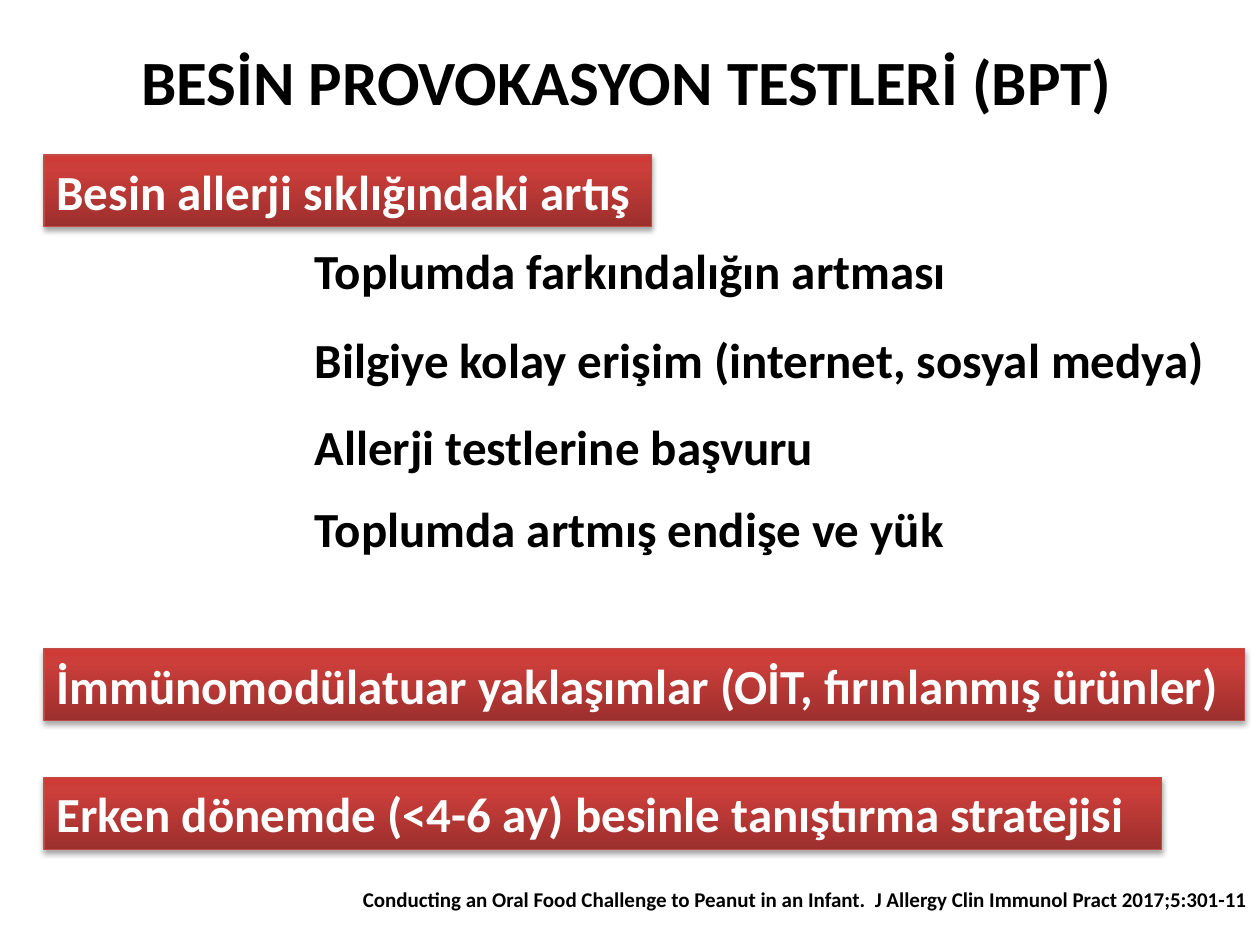
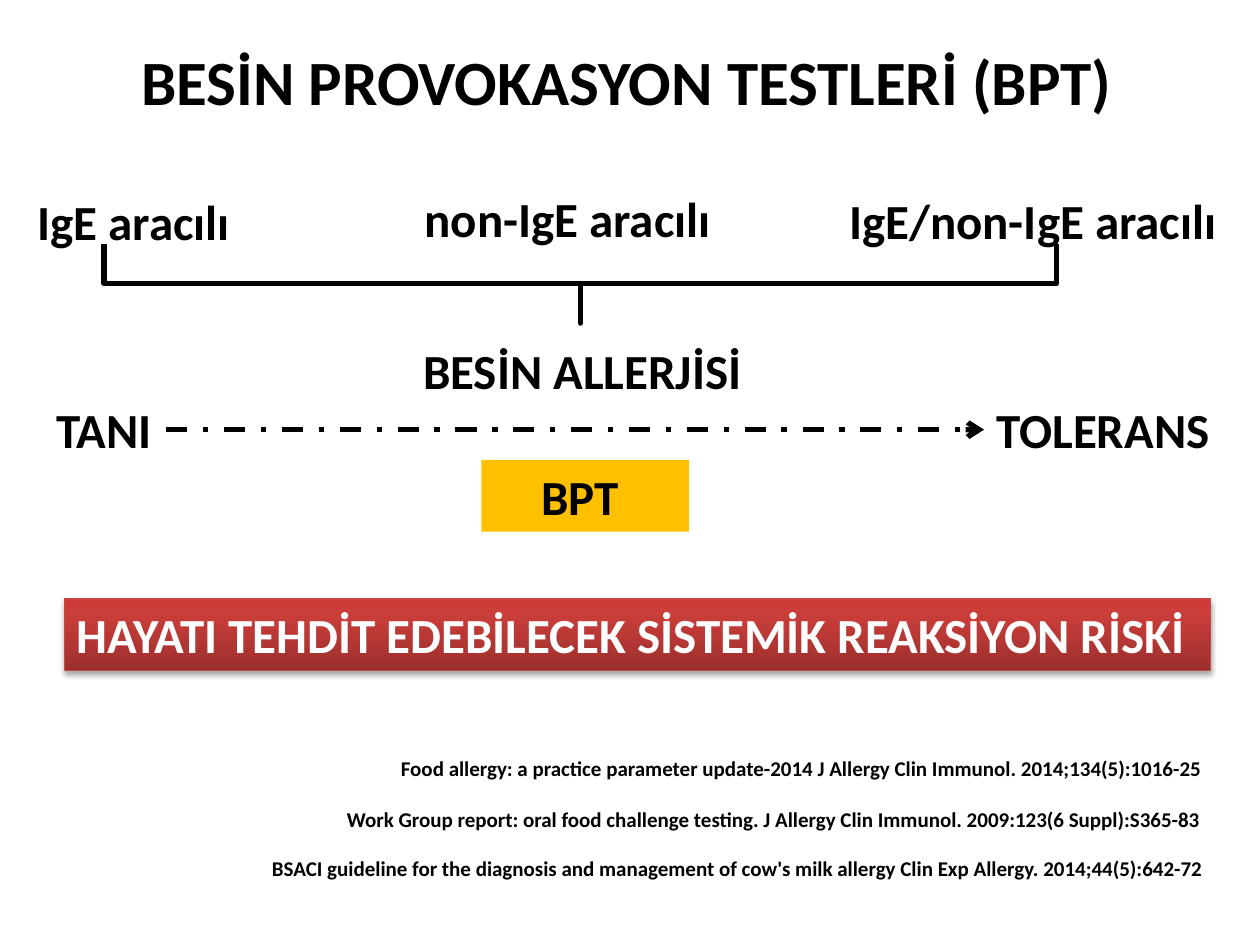
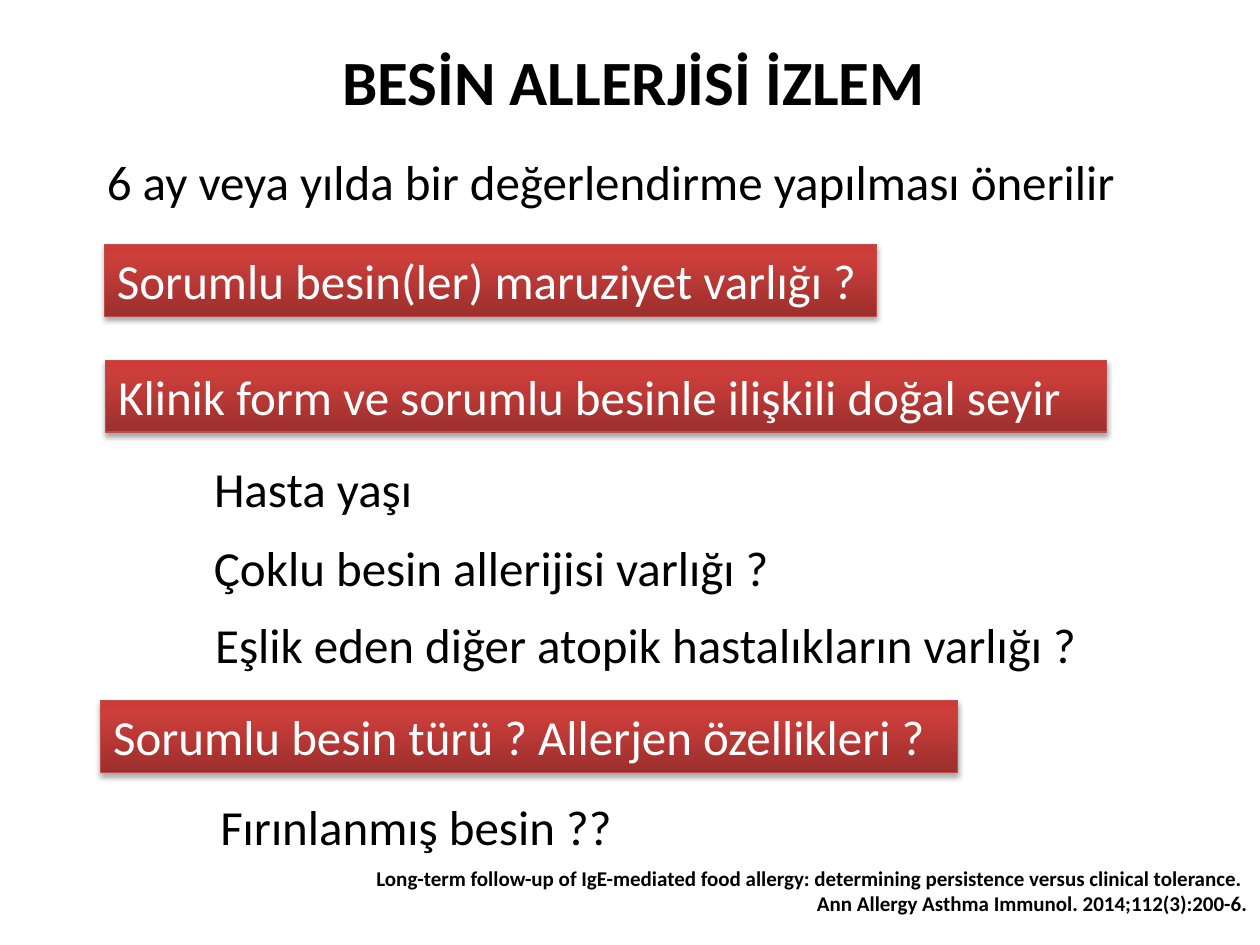
from dataclasses import dataclass
from lxml.etree import SubElement
from pptx import Presentation
from pptx.dml.color import RGBColor as Rgb
from pptx.enum.dml import MSO_LINE as Dash
from pptx.enum.shapes import MSO_CONNECTOR as Link, MSO_SHAPE as Shape
from pptx.enum.text import MSO_ANCHOR as Anchor, MSO_AUTO_SIZE as Fit, PP_ALIGN as Align
from pptx.oxml.ns import qn
from pptx.util import Inches, Pt


@dataclass(frozen=True)
class Theme:
    font: str = "Calibri"
    ink: str = "000000"
    paper: str = "FFFFFF"
    gold: str = "FFC000"
    edge: str = "BF4C48"
    reds: tuple = ((0, "9C2F2D"), (80, "CB3E3A"), (100, "CE3B37"))
    head: int = 36
    body: int = 28
    note: int = 12
    thick: float = 3
    thin: float = 0.75


T = Theme()
WIDE, HIGH = Inches(10), Inches(7.5)
COLS, ROWS = 100, 75
LINE = 5.7  # rows taken by one line of body text

BPT = ("BESİN PROVOKASYON TESTLERİ (BPT) ", 9.8, 81)

# Bars and texts: (text, column, row, columns wide)
# Notes: (lines, column, row, columns wide)
RISE = {
    "title": BPT,
    "bold": True,
    "bars": [
        ("Besin allerji sıklığındaki artış", 3.5, 12.3, 48.2),
        ("İmmünomodülatuar yaklaşımlar (OİT, fırınlanmış ürünler)", 3.5, 51.5, 95.3),
        ("Erken dönemde (<4-6 ay) besinle tanıştırma stratejisi", 3.5, 61.7, 88.7),
    ],
    "texts": [
        ("Toplumda farkındalığın artması", 24, 18.6, 53.6),
        ("Bilgiye kolay erişim (internet, sosyal medya)", 24, 25.7, 73.4),
        ("Allerji testlerine başvuru", 24, 32.6, 42.7),
        ("Toplumda artmış endişe ve yük", 24, 39.1, 54.3),
    ],
    "notes": [
        (["Conducting an Oral Food Challenge to Peanut in an Infant.  "
          "J Allergy Clin Immunol Pract 2017;5:301-11"], 3.9, 69.9, 96.1),
    ],
}

TYPES = {
    "title": BPT,
    "bold": True,
    "bars": [
        ("HAYATI TEHDİT EDEBİLECEK SİSTEMİK REAKSİYON RİSKİ", 5.1, 47.5, 91),
    ],
    "texts": [
        ("IgE aracılı", 2, 14.7, 18.4),
        ("non-IgE aracılı", 32.7, 14.5, 25.9),
        ("IgE/non-IgE aracılı", 66.4, 14.6, 32.4),
        ("TANI", 3.5, 31.2, 9.7),
        ("TOLERANS", 78.1, 31.2, 19.1),
        ("BESİN ALLERJİSİ", 32.6, 26.5, 27.6),
    ],
    "notes": [
        (["Food allergy: a practice parameter update-2014 "
          "J Allergy Clin Immunol. 2014;134(5):1016-25"], 5.1, 59.5, 91.3),
        (["Work Group report: oral food challenge testing. "
          "J Allergy Clin Immunol. 2009:123(6 Suppl):S365-83"], 19.3, 63.5, 77),
        (["BSACI guideline for the diagnosis and management of cow's milk allergy "
          "Clin Exp Allergy. 2014;44(5):642-72"], 19.3, 67.4, 77.2),
    ],
}

WATCH = {
    "title": ("BESİN ALLERJİSİ İZLEM", 25.9, 48.8),
    "bold": False,
    "bars": [
        ("Sorumlu besin(ler) maruziyet varlığı ?", 8.3, 19.4, 61.3),
        ("Klinik form ve sorumlu besinle ilişkili doğal seyir", 8.4, 28.6, 79.4),
        ("Sorumlu besin türü ? Allerjen özellikleri ?", 8, 55.6, 68),
    ],
    "texts": [
        ("6 ay veya yılda bir değerlendirme yapılması önerilir", 7.5, 11.5, 83.7),
        ("Hasta yaşı", 16, 35.9, 17.9),
        ("Çoklu besin allerijisi varlığı ?", 16, 42.2, 47.4),
        ("Eşlik eden diğer atopik hastalıkların varlığı ?", 16.1, 48.3, 71),
        ("Fırınlanmış besin ??", 16.5, 62.7, 34.3),
    ],
    "notes": [
        (["Long-term follow-up of IgE-mediated food allergy: "
          "determining persistence versus clinical tolerance. ",
          "Ann Allergy Asthma Immunol. 2014;112(3):200-6."], 0, 68.2, 100),
    ],
}

BRACE = (42.9, -15.3, 6.3, 75.6)
ARROW = (13.2, 78.1, 34.1)
TEST = ("BPT ", 38.2, 36.5, 16.5)


def across(n):
    return round(WIDE * n / COLS)


def down(n):
    return round(HIGH * n / ROWS)


def place(x, y, w, h):
    return across(x), down(y), across(w), down(h)


def write(shape, lines, size, color=T.ink, bold=True, align=Align.LEFT, wrap=False):
    frame = shape.text_frame
    frame.word_wrap = wrap
    frame.auto_size = Fit.SHAPE_TO_FIT_TEXT
    frame.vertical_anchor = Anchor.TOP
    for i, line in enumerate(lines):
        para = frame.add_paragraph() if i else frame.paragraphs[0]
        para.alignment = align
        run = para.add_run()
        run.text = line
        font = run.font
        font.name, font.size, font.bold = T.font, Pt(size), bold
        font.color.rgb = Rgb.from_string(color)


def stroke(line, color, width):
    line.color.rgb = Rgb.from_string(color)
    line.width = Pt(width)


def add_text(slide, lines, box, size, **style):
    write(slide.shapes.add_textbox(*place(*box)), lines, size, **style)


def add_form(slide, kind, box):
    form = slide.shapes.add_shape(kind, *place(*box))
    form.shadow.inherit = False
    return form


def add_tint(parent, color, **attrs):
    tint = SubElement(parent, qn("a:srgbClr"), val=color)
    for name, val in attrs.items():
        SubElement(tint, qn("a:" + name), val=str(val))


def add_bar(slide, text, x, y, w, bold):
    """Red gradient bar with a soft shadow below it."""
    bar = add_form(slide, Shape.RECTANGLE, (x, y, w, LINE))
    bar.fill.gradient()
    bar.fill.gradient_angle = 90
    stops = bar._element.spPr.find(".//" + qn("a:gsLst"))
    for old in list(stops):
        stops.remove(old)
    for pos, color in T.reds:
        add_tint(SubElement(stops, qn("a:gs"), pos=str(pos * 1000)), color)
    stroke(bar.line, T.edge, T.thin)
    glow = SubElement(
        bar._element.spPr.find(qn("a:effectLst")), qn("a:outerShdw"),
        blurRad=str(Pt(3.1)), dist=str(Pt(1.8)), dir="5400000", rotWithShape="0")
    add_tint(glow, T.ink, alpha=35000)
    write(bar, [text], T.body, T.paper, bold)


def add_brace(slide):
    brace = add_form(slide, Shape.RIGHT_BRACE, BRACE)
    brace.rotation = 90
    brace.adjustments[0], brace.adjustments[1] = 0, 0.5
    brace.fill.background()
    stroke(brace.line, T.ink, T.thick)


def add_arrow(slide):
    start, end, row = ARROW
    arrow = slide.shapes.add_connector(
        Link.STRAIGHT, across(start), down(row), across(end), down(row))
    stroke(arrow.line, T.ink, T.thick)
    arrow.line.dash_style = Dash.DASH_DOT
    props = arrow._element.spPr
    SubElement(props.find(qn("a:ln")), qn("a:tailEnd"), type="arrow")
    SubElement(props, qn("a:effectLst"))


def add_test(slide):
    text, x, y, w = TEST
    test = add_form(slide, Shape.RECTANGLE, (x, y, w, LINE))
    test.fill.solid()
    test.fill.fore_color.rgb = Rgb.from_string(T.gold)
    test.line.fill.background()
    write(test, [text], T.body, align=Align.CENTER, wrap=True)


def add_page(deck, page):
    slide = deck.slides.add_slide(deck.slide_layouts[6])
    title, x, w = page["title"]
    add_text(slide, [title], (x, 2.9, w, 7.1), T.head, align=Align.CENTER)
    for text, x, y, w in page["texts"]:
        add_text(slide, [text], (x, y, w, LINE), T.body, bold=page["bold"])
    for bar in page["bars"]:
        add_bar(slide, *bar, page["bold"])
    for lines, x, y, w in page["notes"]:
        add_text(slide, lines, (x, y, w, 1 + 2 * len(lines)), T.note,
                 align=Align.RIGHT, wrap=True)
    return slide


def main():
    deck = Presentation()
    deck.slide_width, deck.slide_height = WIDE, HIGH
    add_page(deck, RISE)
    types = add_page(deck, TYPES)
    for draw in (add_brace, add_arrow, add_test):
        draw(types)
    add_page(deck, WATCH)
    deck.save("out.pptx")


if __name__ == "__main__":
    main()
